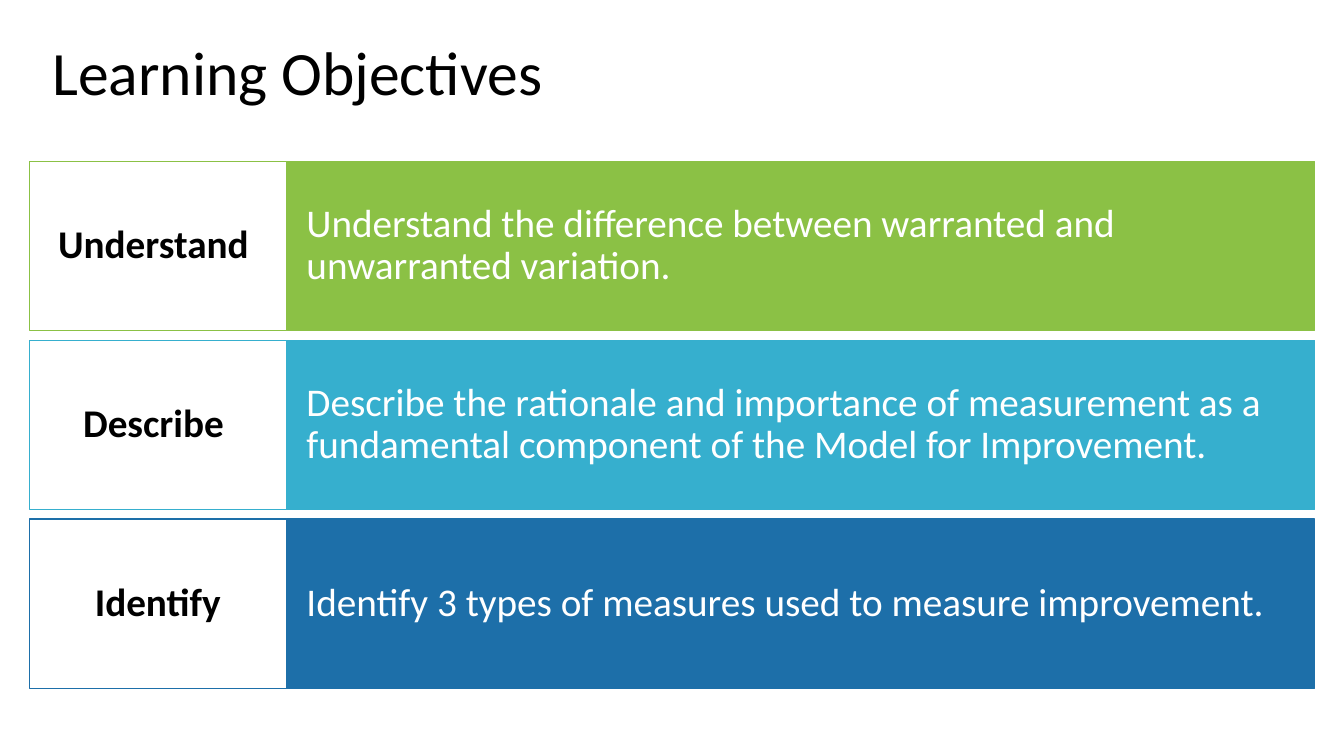
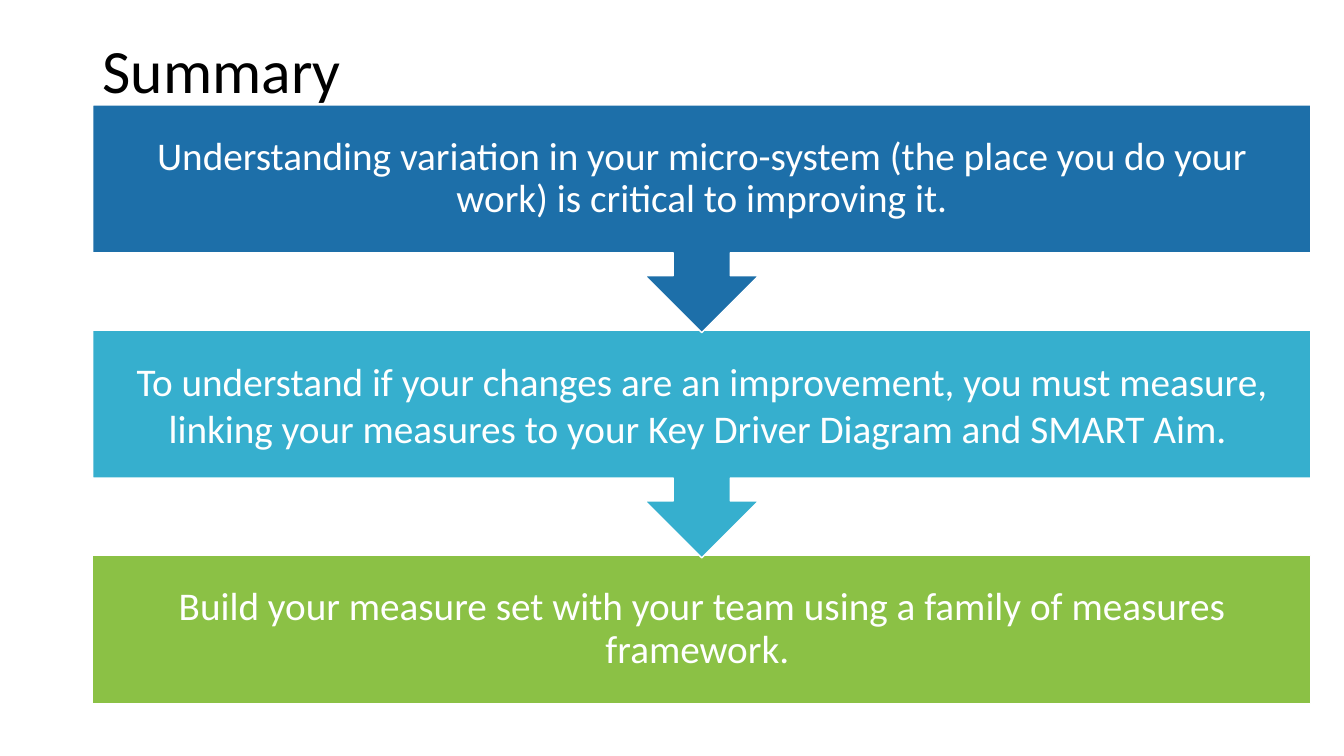
"""Build the learning objectives and summary slides of a measurement course."""
import pptx
import pptx.dml.color
import pptx.enum.shapes
import pptx.enum.text
import pptx.util

Inches = pptx.util.Inches
RGBColor = pptx.dml.color.RGBColor
SHAPE = pptx.enum.shapes.MSO_SHAPE
ALIGN = pptx.enum.text.PP_ALIGN

FONT = "Calibri"
GREEN = RGBColor(0x8B, 0xC1, 0x45)
TEAL = RGBColor(0x36, 0xAF, 0xCE)
BLUE = RGBColor(0x1D, 0x6F, 0xA9)
WHITE = RGBColor(0xFF, 0xFF, 0xFF)
BLACK = RGBColor(0x00, 0x00, 0x00)

prs = pptx.Presentation()
prs.slide_width = Inches(13.33)
prs.slide_height = Inches(7.5)
blank = prs.slide_layouts[6]


def add_text(s, text, left, top, width, height, shape=None, fill=None, line=None,
             size=28, color=WHITE, bold=False, align=ALIGN.CENTER,
             inset=(0.1, 0.05), spacing=0.9):
    """Add a text box, or a filled shape holding the text."""
    box = [Inches(v) for v in (left, top, width, height)]
    if shape is None:
        sp = s.shapes.add_textbox(*box)
    else:
        sp = s.shapes.add_shape(shape, *box)
        sp.shadow.inherit = False
        sp.fill.solid()
        sp.fill.fore_color.rgb = fill
        sp.line.color.rgb = line
        sp.line.width = pptx.util.Pt(1)
    tf = sp.text_frame
    tf.word_wrap = True
    tf.vertical_anchor = pptx.enum.text.MSO_ANCHOR.MIDDLE
    tf.margin_left = tf.margin_right = Inches(inset[0])
    tf.margin_top = tf.margin_bottom = Inches(inset[1])
    p = tf.paragraphs[0]
    p.alignment = align
    p.line_spacing = spacing
    r = p.add_run()
    r.text = text
    r.font.name = FONT
    r.font.size = pptx.util.Pt(size)
    r.font.bold = bold
    r.font.color.rgb = color


title_style = dict(size=44, color=BLACK, align=ALIGN.LEFT)

s = prs.slides.add_slide(blank)
add_text(s, "Learning Objectives", 0.42, 0.02, 8.62, 1.45, **title_style)

objectives = [
    ("Understand ", "Understand the difference between warranted and unwarranted variation.", GREEN),
    ("Describe ", "Describe the rationale and importance of measurement as a fundamental "
     "component of the Model for Improvement.", TEAL),
    ("Identify", "Identify 3 types of measures used to measure improvement.", BLUE),
]
row_pitch = (5.15 - 1.6) / 2
for i, (verb, objective, color) in enumerate(objectives):
    top = 1.6 + i * row_pitch
    add_text(s, objective, 2.84, top, 10.2, 1.68, shape=SHAPE.RECTANGLE,
             fill=color, line=color, align=ALIGN.LEFT, inset=(0.2, 0.43))
    add_text(s, verb, 0.29, top, 2.55, 1.68, shape=SHAPE.RECTANGLE,
             fill=WHITE, line=color, color=BLACK, bold=True, inset=(0.13, 0.17))

s = prs.slides.add_slide(blank)
add_text(s, "Summary", 0.92, 0, 11.5, 1.45, **title_style)

steps = [
    ("Understanding variation in your micro-system (the place you do your work) "
     "is critical to improving it.", BLUE, SHAPE.DOWN_ARROW_CALLOUT, 2.26, 0.9),
    ("To understand if your changes are an improvement, you must measure, linking "
     "your measures to your Key Driver Diagram and SMART Aim. ", TEAL,
     SHAPE.DOWN_ARROW_CALLOUT, 2.26, 1.0),
    ("Build your measure set with your team using a family of measures framework. ",
     GREEN, SHAPE.RECTANGLE, 1.47, 0.9),
]
step_pitch = (5.51 - 1.04) / 2
for i, (text, color, shape, height, spacing) in reversed(list(enumerate(steps))):
    add_text(s, text, 0.92, 1.04 + i * step_pitch, 12.08, height, shape=shape,
             fill=color, line=WHITE, inset=(0.22, 0.22), spacing=spacing)

prs.save("out.pptx")
